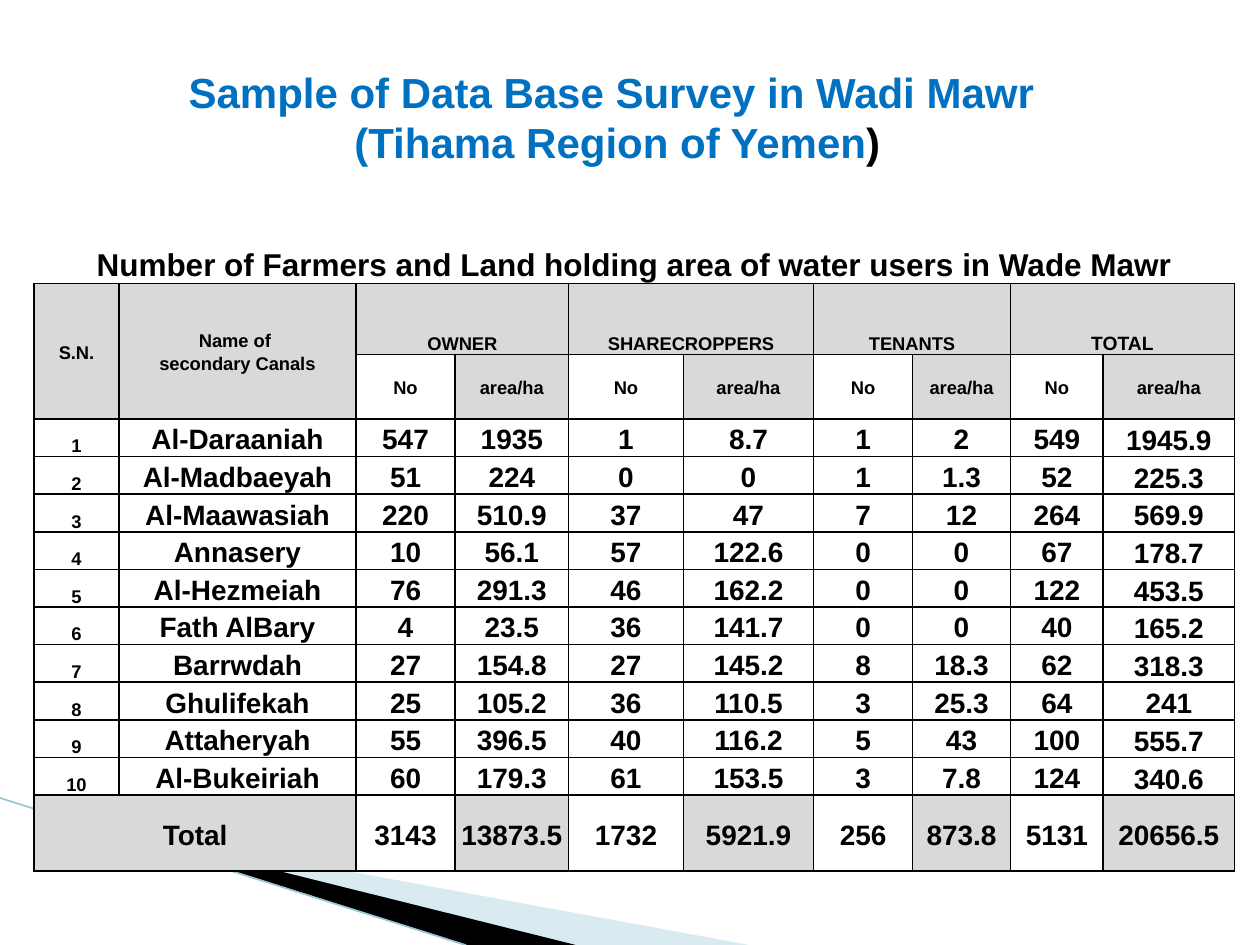
from lxml import etree
from pptx import Presentation
from pptx.dml.color import RGBColor
from pptx.enum.shapes import MSO_CONNECTOR
from pptx.enum.text import MSO_ANCHOR as Anchor, PP_ALIGN as Align
from pptx.oxml.ns import qn
from pptx.util import Pt

COLORS = {"title": "0070C0", "text": "000000", "shade": "D9D9D9", "plain": "FFFFFF",
          "wave": "A0CBDC", "wave_edge": "97C5D8", "band": "000000", "grid": "000000"}
NO_STYLE = "{2D5ABB26-0587-4C30-8999-92F81FD0307C}"

CAPTION = "Number of Farmers and Land holding area of water users in Wade Mawr"
GROUPS = {"OWNER": 10.5, "SHARECROPPERS": 10.5, "TENANTS": 10.5, "TOTAL": 11}
CANALS = [
    ("Al-Daraaniah", "547", "1935", "1", "8.7", "1", "2", "549", "1945.9"),
    ("Al-Madbaeyah", "51", "224", "0", "0", "1", "1.3", "52", "225.3"),
    ("Al-Maawasiah", "220", "510.9", "37", "47", "7", "12", "264", "569.9"),
    ("Annasery", "10", "56.1", "57", "122.6", "0", "0", "67", "178.7"),
    ("Al-Hezmeiah", "76", "291.3", "46", "162.2", "0", "0", "122", "453.5"),
    ("Fath AlBary", "4", "23.5", "36", "141.7", "0", "0", "40", "165.2"),
    ("Barrwdah", "27", "154.8", "27", "145.2", "8", "18.3", "62", "318.3"),
    ("Ghulifekah", "25", "105.2", "36", "110.5", "3", "25.3", "64", "241"),
    ("Attaheryah", "55", "396.5", "40", "116.2", "5", "43", "100", "555.7"),
    ("Al-Bukeiriah", "60", "179.3", "61", "153.5", "3", "7.8", "124", "340.6"),
]
TOTALS = ("3143", "13873.5", "1732", "5921.9", "256", "873.8", "5131", "20656.5")
COLUMN_WIDTHS = (48.5, 135.5, 56.5, 65, 65.5, 74.5, 56.5, 56, 53, 75)
ROW_HEIGHTS = (56, 40.5, 37, *[21.5] * len(CANALS), 43.5)


def rgb(name):
    return RGBColor.from_string(COLORS[name])


def set_font(font, size, color="text"):
    for key, value in {"name": "Arial", "size": Pt(size), "bold": True}.items():
        setattr(font, key, value)
    font.color.rgb = rgb(color)


def add_polygon(slide, points, color, opacity=None):
    corners = [(Pt(x), Pt(y)) for x, y in points]
    builder = slide.shapes.build_freeform(*corners[0], scale=1.0)
    builder.add_line_segments(corners[1:], close=True)
    polygon = builder.convert_to_shape()
    polygon.shadow.inherit = False
    polygon.line.fill.background()
    polygon.fill.solid()
    polygon.fill.fore_color.rgb = rgb(color)
    if opacity:
        tint = polygon._element.spPr.find(".//" + qn("a:srgbClr"))
        etree.SubElement(tint, qn("a:alpha"), val=str(opacity * 1000))


def add_wave(slide):
    add_polygon(slide, [(39.5, 468.5), (428, 540), (328, 540)], "wave", 40)
    add_polygon(slide, [(38, 467.5), (329, 540), (267, 540)], "band")
    edge = slide.shapes.add_connector(MSO_CONNECTOR.STRAIGHT, Pt(0), Pt(456), Pt(266), Pt(540))
    edge.line.color.rgb = rgb("wave_edge")
    edge.line.width = Pt(0.95)
    etree.SubElement(edge._element.spPr, qn("a:effectLst"))


def add_title(slide):
    box = slide.shapes.add_textbox(Pt(0), Pt(34), Pt(705.5), Pt(65.5))
    frame = box.text_frame
    for key, value in {"word_wrap": True, "vertical_anchor": Anchor.MIDDLE}.items():
        setattr(frame, key, value)
    lines = [[("Sample of Data Base Survey in Wadi Mawr ", "title")],
             [("(Tihama Region of Yemen", "title"), (")", "text")]]
    for index, pieces in enumerate(lines):
        line = frame.add_paragraph() if index else frame.paragraphs[0]
        line.alignment = Align.CENTER
        for text, color in pieces:
            run = line.add_run()
            run.text = text
            set_font(run.font, 24, color)


def draw_borders(cell, sides):
    """Draw 1 pt rules on the named sides, given in the order L, R, T, B."""
    properties = cell._tc.get_or_add_tcPr()
    for position, side in enumerate(sides):
        rule = etree.Element(qn("a:ln" + side), w=str(Pt(1)))
        fill = etree.SubElement(rule, qn("a:solidFill"))
        etree.SubElement(fill, qn("a:srgbClr"), val=COLORS["grid"])
        properties.insert(position, rule)


def fill_cell(cell, text, size, fill=None, anchor=Anchor.MIDDLE):
    layout = {"margin_left": Pt(3), "margin_right": Pt(3), "margin_top": 0,
              "margin_bottom": 0, "vertical_anchor": anchor}
    for key, value in layout.items():
        setattr(cell, key, value)
    if fill:
        cell.fill.solid()
        cell.fill.fore_color.rgb = rgb(fill)
    cell.text = text
    for paragraph in cell.text_frame.paragraphs:
        paragraph.alignment = Align.CENTER
        paragraph.line_spacing = 1.15
        for run in paragraph.runs:
            set_font(run.font, size)


def fill_header(table):
    table.cell(0, 0).merge(table.cell(0, 9))
    fill_cell(table.cell(0, 0), CAPTION, 18, anchor=Anchor.BOTTOM)
    for column, label in enumerate(("S.N.", "Name of \vsecondary Canals")):
        table.cell(1, column).merge(table.cell(2, column))
        fill_cell(table.cell(1, column), label, 10.5, "shade")
    for index, (group, size) in enumerate(GROUPS.items()):
        column = 2 + 2 * index
        table.cell(1, column).merge(table.cell(1, column + 1))
        fill_cell(table.cell(1, column), group, size, "shade", Anchor.BOTTOM)
        fill_cell(table.cell(2, column), "No", 10.5)
        fill_cell(table.cell(2, column + 1), "area/ha", 10.5, "shade")


def fill_body(table):
    for number, canal in enumerate(CANALS, 1):
        row = number + 2
        fill_cell(table.cell(row, 0), str(number), 10.5, "plain", Anchor.BOTTOM)
        for column, value in enumerate(canal, 1):
            anchor = Anchor.BOTTOM if column == len(canal) else Anchor.MIDDLE
            fill_cell(table.cell(row, column), value, 16, "plain", anchor)


def fill_totals(table):
    row = len(ROW_HEIGHTS) - 1
    table.cell(row, 0).merge(table.cell(row, 1))
    fill_cell(table.cell(row, 0), "Total", 16, "shade")
    for column, value in enumerate(TOTALS, 2):
        fill_cell(table.cell(row, column), value, 16, "shade" if column % 2 else None)


def add_survey_table(slide):
    frame = slide.shapes.add_table(len(ROW_HEIGHTS), len(COLUMN_WIDTHS), Pt(19.5), Pt(106),
                                   Pt(sum(COLUMN_WIDTHS)), Pt(sum(ROW_HEIGHTS)))
    table = frame.table
    table.first_row = table.horz_banding = False
    table._tbl.tblPr.find(qn("a:tableStyleId")).text = NO_STYLE
    for column, width in zip(table.columns, COLUMN_WIDTHS):
        column.width = Pt(width)
    for index, (row, height) in enumerate(zip(table.rows, ROW_HEIGHTS)):
        row.height = Pt(height)
        for cell in row.cells:
            draw_borders(cell, "LRTB" if index else "B")
    fill_header(table)
    fill_body(table)
    fill_totals(table)


def main():
    deck = Presentation()
    deck.slide_width, deck.slide_height = Pt(720), Pt(540)
    slide = deck.slides.add_slide(deck.slide_layouts[6])
    add_wave(slide)
    add_survey_table(slide)
    add_title(slide)
    deck.save("out.pptx")


if __name__ == "__main__":
    main()
